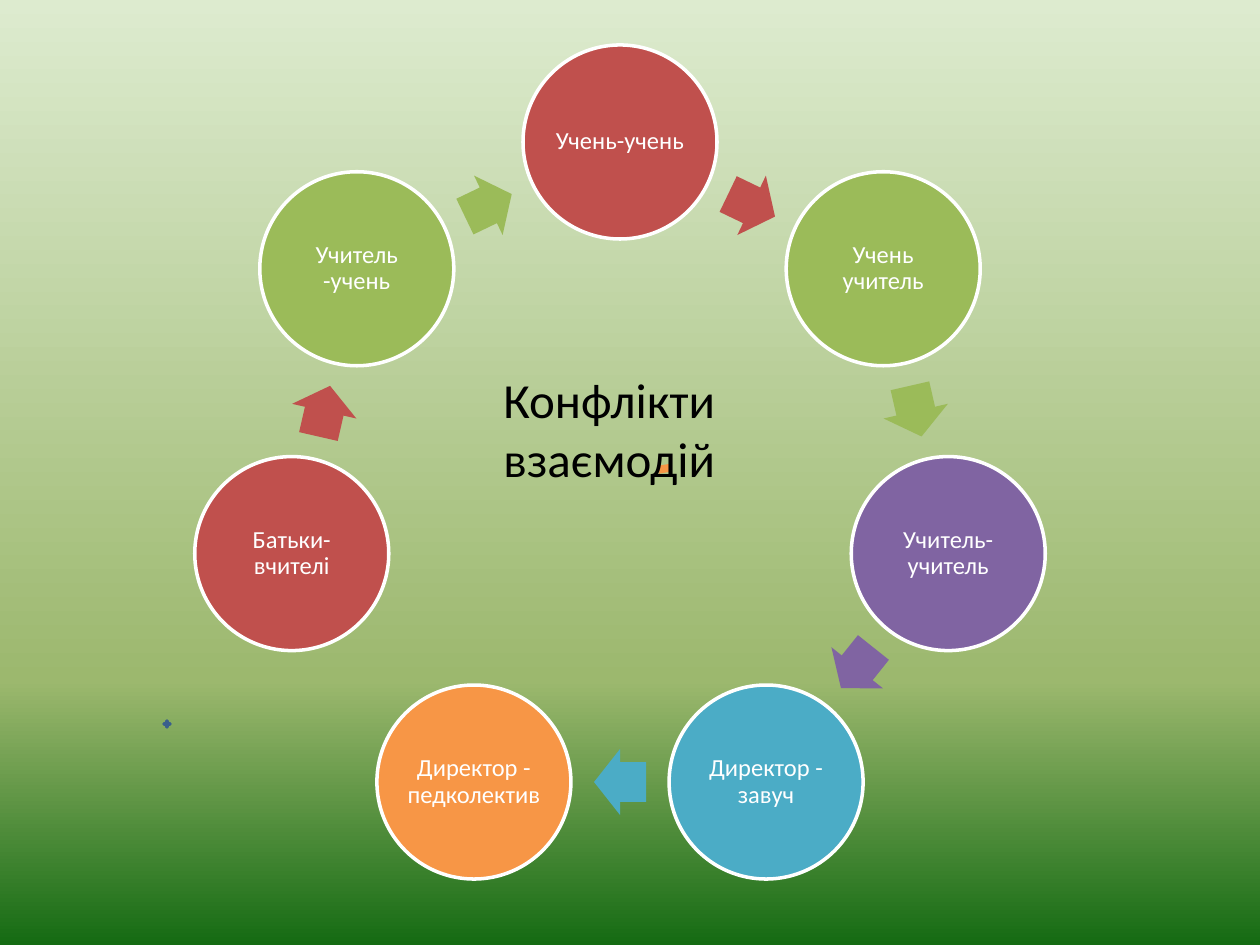
from copy import deepcopy
from math import cos, pi, radians, sin

from pptx import Presentation
from pptx.dml.color import RGBColor
from pptx.enum.shapes import MSO_SHAPE
from pptx.enum.text import MSO_ANCHOR, PP_ALIGN
from pptx.oxml.ns import qn
from pptx.util import Emu, Pt

OVAL = MSO_SHAPE.OVAL
ARROW = MSO_SHAPE.RIGHT_ARROW
SCROLL = MSO_SHAPE.HORIZONTAL_SCROLL
STAR = MSO_SHAPE.STAR_4_POINT
MIDDLE = MSO_ANCHOR.MIDDLE
CENTER = PP_ALIGN.CENTER

FONT = "Calibri"
COLORS = {
    "red": "C0504D", "green": "9BBB59", "purple": "8064A2",
    "teal": "4BACC6", "orange": "F79646", "blue": "4F81BD",
    "navy": "3A5F8C", "white": "FFFFFF", "black": "000000",
    "pale": "DDEBCF", "olive": "9CB86E", "forest": "156B13",
}
STOPS = [("pale", 0), ("olive", 0.72), ("forest", 1)]
ROLES = [
    ("Учень-учень", "red"),
    ("Учень учитель", "green"),
    ("Учитель-учитель", "purple"),
    ("Директор - завуч", "teal"),
    ("Директор - педколектив", "orange"),
    ("Батьки-вчителі", "red"),
    ("Учитель -учень", "green"),
]
DISC = 194      # diameter of a circle
SCROLL_AT = 4   # the step marked by a scroll in place of an arrow


def px(n):
    return Emu(round(n * 914400 / 126))


def rgb(name):
    return RGBColor.from_string(COLORS[name])


def add_mark(slide, kind, mid, size, color, edge=None, turn=0):
    """Add a filled shape centred on mid."""
    (x, y), (w, h) = mid, size
    mark = slide.shapes.add_shape(
        kind, px(x - w / 2), px(y - h / 2), px(w), px(h))
    mark.shadow.inherit = False
    mark.rotation = turn
    mark.fill.solid()
    mark.fill.fore_color.rgb = rgb(color)
    if edge:
        mark.line.color.rgb = rgb(edge)
        mark.line.width = Pt(2)
    else:
        mark.line.fill.background()
    return mark


def style(par, size, color):
    for run in par.runs:
        run.font.name = FONT
        run.font.size = Pt(size)
        run.font.color.rgb = rgb(color)


def add_label(disc, text):
    frame = disc.text_frame
    frame.text = text
    frame.word_wrap = True
    frame.vertical_anchor = MIDDLE
    frame.margin_left = frame.margin_right = px(2)
    frame.margin_top = frame.margin_bottom = px(2)
    par = frame.paragraphs[0]
    par.alignment = CENTER
    par.line_spacing = 0.9
    style(par, 14, "white")


def add_cycle(slide, left, top, width, height):
    """Place the circles on a ring, with a turned arrow after each."""
    count = len(ROLES)
    step = 360 / count
    ring = (height - DISC) / (1 + cos(pi / count))
    hub = left + width / 2, top + DISC / 2 + ring

    def spot(angle, reach):
        turn = radians(angle)
        return hub[0] + reach * sin(turn), hub[1] - reach * cos(turn)

    for i, (text, color) in enumerate(ROLES):
        disc = add_mark(slide, OVAL, spot(i * step, ring), (DISC, DISC),
                        color, "white")
        add_label(disc, text)
        if i == SCROLL_AT:
            mid = hub[0] + 45, hub[1] - 10
            scroll = add_mark(slide, SCROLL, mid, (8, 14), color, turn=80.7)
            scroll.element.spPr.find(qn("a:xfrm")).set("flipV", "1")
            continue
        angle = (i + 0.5) * step
        arrow = add_mark(slide, ARROW, spot(angle, ring * cos(pi / count)),
                         (52, 66), color, turn=angle)
        arrow.adjustments[0] = 0.6
        arrow.adjustments[1] = 0.5


def add_title(slide, left, top, width, height):
    box = slide.shapes.add_textbox(px(left), px(top), px(width), px(height))
    frame = box.text_frame
    frame.word_wrap = True
    frame.text = "Конфлікти\nвзаємодій"
    for par in frame.paragraphs:
        style(par, 28, "black")


def paint_back(slide):
    fill = slide.background.fill
    fill.gradient()
    fill.gradient_angle = 270
    # A third stop is needed beside the two default ones
    stops = slide.element.find(".//" + qn("a:gsLst"))
    stops.append(deepcopy(stops[-1]))
    for stop, (color, place) in zip(fill.gradient_stops, STOPS):
        stop.color.rgb = rgb(color)
        stop.position = place


def main():
    deck = Presentation()
    deck.slide_width, deck.slide_height = px(1260), px(945)
    slide = deck.slides.add_slide(deck.slide_layouts[6])
    paint_back(slide)
    add_cycle(slide, 195, 45, 850, 834)
    # Small star at the lower left
    add_mark(slide, STAR, (167, 724), (6, 6), "blue", "navy")
    add_title(slide, 491, 363, 287, 131)
    deck.save("out.pptx")


if __name__ == "__main__":
    main()
